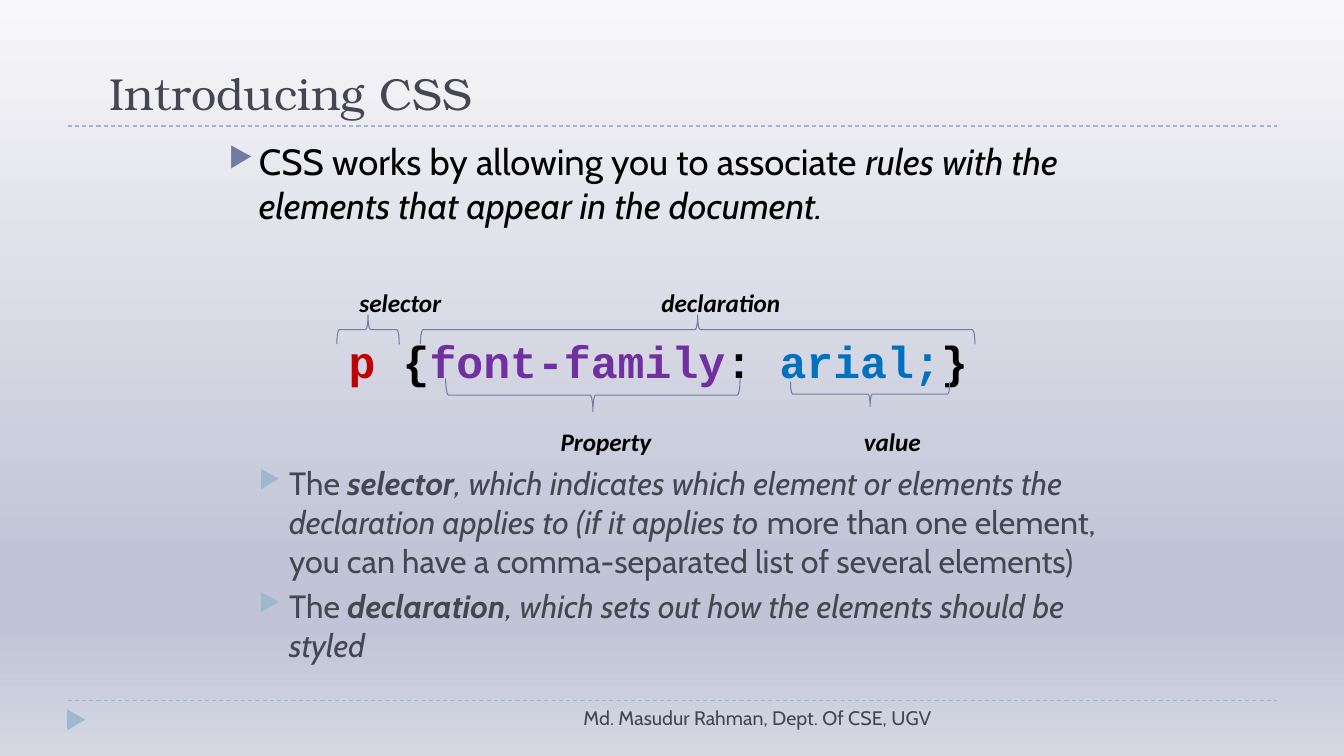
from lxml import etree
from pptx import Presentation
from pptx.dml.color import RGBColor
from pptx.enum.dml import MSO_LINE_DASH_STYLE as Dash
from pptx.enum.shapes import MSO_CONNECTOR as Connector, MSO_SHAPE as Shape
from pptx.enum.text import MSO_ANCHOR as Anchor, PP_ALIGN as Align
from pptx.oxml.ns import qn
from pptx.util import Inches, Pt

# Content
INK, BLACK, SLATE, SKY = "464653", "000000", "727CA3", "9FB8CD"
BACKDROP = [(0, "F8F8FA"), (74, "C0C4D6"), (83, "C0C4D6"), (100, "D5D8E3")]
PLAIN, ITALIC = {}, {"italic": True}
STRONG = {"bold": True, "italic": True}

TITLE = [[("Introducing CSS", PLAIN)]]
INTRO = [[
    ("CSS works by allowing you to associate ", PLAIN),
    ("rules with the elements that appear in the document.", ITALIC),
]]
CODE = [[
    ("p", {"color": "C00000"}),
    (" {", PLAIN),
    ("font-family", {"color": "7030A0"}),
    (": ", PLAIN),
    ("arial;", {"color": "0070C0"}),
    ("}", PLAIN),
]]
PARTS = [
    [
        ("The ", PLAIN), ("selector", STRONG),
        (", which indicates which element or elements the declaration applies to "
         "(if it applies to ", ITALIC),
        ("more than one element, you can have a comma-separated list of several elements)",
         PLAIN),
    ],
    [
        ("The ", PLAIN), ("declaration", STRONG),
        (", which sets out how the elements should be styled", ITALIC),
    ],
]
FOOTER = [[("Md. Masudur Rahman, Dept. Of CSE, UGV", PLAIN)]]

# Label, centre x, top
LABELS = [("selector", 3.97, 2.8), ("declaration", 7.15, 2.8),
          ("Property", 6.01, 4.18), ("value", 8.85, 4.18)]
# Centre x, centre y, span, depth, rotation
BRACES = [(3.65, 3.27, 0.62, 0.29, 270), (6.92, 3.27, 5.5, 0.29, 270),
          (5.88, 3.92, 2.92, 0.33, 90), (8.63, 3.91, 1.58, 0.25, 90)]
RULES = [1.25, 6.95]
LABEL_WIDTH = 1.8

deck = Presentation()
deck.slide_width, deck.slide_height = Inches(13.33), Inches(7.5)
page = deck.slides.add_slide(deck.slide_layouts[6])


def rgb(code):
    return RGBColor.from_string(code)


def add_bullet(para, color, indent):
    props = para._p.get_or_add_pPr()
    props.set("marL", str(Inches(indent)))
    props.set("indent", str(Inches(-0.3)))
    tint = etree.SubElement(props, qn("a:buClr"))
    etree.SubElement(tint, qn("a:srgbClr"), val=color)
    etree.SubElement(props, qn("a:buSzPct"), val="76000")
    etree.SubElement(props, qn("a:buChar"), char="▶")


def add_text(frame, paragraphs, font, size, color, align=Align.LEFT,
             anchor=Anchor.TOP, bullet=None, indent=0, gap=0):
    box = page.shapes.add_textbox(*map(Inches, frame))
    text = box.text_frame
    text.word_wrap, text.vertical_anchor = True, anchor
    for index, runs in enumerate(paragraphs):
        para = text.add_paragraph() if index else text.paragraphs[0]
        para.alignment = align
        if index:
            para.space_before = Pt(gap)
        if bullet:
            add_bullet(para, bullet, indent)
        for words, look in runs:
            span = para.add_run()
            span.text = words
            values = {"name": font, "size": Pt(size), "bold": False, "italic": False, **look}
            span.font.color.rgb = rgb(values.pop("color", color))
            for key, value in values.items():
                setattr(span.font, key, value)


# Background
fill = page.background.fill
fill.gradient()
fill.gradient_angle = 270
stops = page._element.xpath(".//a:gsLst")[0]
for stop in list(stops):
    stops.remove(stop)
for percent, code in BACKDROP:
    stop = etree.SubElement(stops, qn("a:gs"), pos=str(percent * 1000))
    etree.SubElement(stop, qn("a:srgbClr"), val=code)

# Dashed rules and corner marker
for y in RULES:
    rule = page.shapes.add_connector(
        Connector.STRAIGHT, Inches(0.67), Inches(y), Inches(12.67), Inches(y))
    rule.line.color.rgb = rgb(SKY)
    rule.line.width = Pt(0.75)
    rule.line.dash_style = Dash.DASH
    etree.SubElement(rule._element.spPr, qn("a:effectLst"))

marker = page.shapes.add_shape(
    Shape.ISOSCELES_TRIANGLE, *map(Inches, (0.65, 7.05, 0.21, 0.18)))
marker.rotation = 90
marker.shadow.inherit = False
marker.fill.solid()
marker.fill.fore_color.rgb = rgb(SKY)
marker.line.fill.background()

# Texts
add_text((0.99, 0.15, 12, 1.08), TITLE, "TeX Gyre Bonum", 32, INK, anchor=Anchor.BOTTOM)
add_text((2.17, 1.33, 9, 1), INTRO, "Cabin", 26, BLACK, bullet=SLATE, indent=0.3)
add_text((3, 3.26, 7.06, 0.6), [[(words, {"bold": True, **look}) for words, look in CODE[0]]],
         "Courier New", 32, BLACK, Align.CENTER)
add_text((2.17, 4.55, 9, 2.18), PARTS, "Cabin", 23, INK, bullet=SKY, indent=0.6, gap=5)
add_text((4.23, 6.95, 5.11, 0.4), FOOTER, "Cabin", 14, INK, Align.RIGHT)

# Labels and braces around the code
for word, center, top in LABELS:
    add_text((center - LABEL_WIDTH / 2, top, LABEL_WIDTH, 0.4), [[(word, STRONG)]],
             "Calibri", 18, BLACK, Align.CENTER)

for x, y, span_length, depth, turn in BRACES:
    frame = (x - depth / 2, y - span_length / 2, depth, span_length)
    brace = page.shapes.add_shape(Shape.RIGHT_BRACE, *map(Inches, frame))
    brace.rotation = turn
    brace.shadow.inherit = False
    brace.fill.background()
    brace.line.color.rgb = rgb(SLATE)
    brace.line.width = Pt(0.75)

deck.save("out.pptx")
